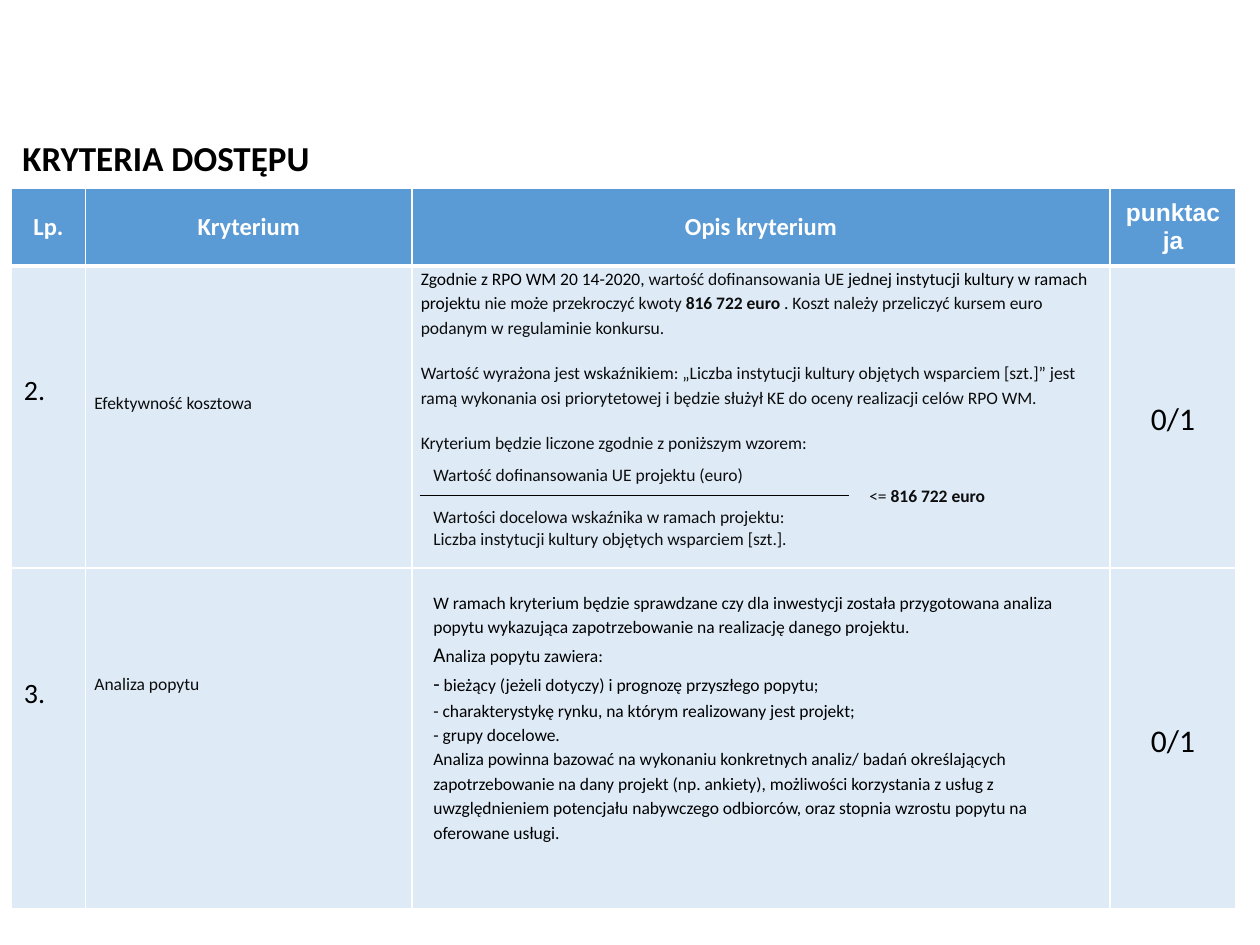
import pptx
import pptx.dml.color
import pptx.enum.text
import pptx.util
import lxml.etree
import pptx.oxml.ns

RGB = pptx.dml.color.RGBColor
BLACK = RGB(0x00, 0x00, 0x00)
DARK = RGB(0x0D, 0x0D, 0x0D)
WHITE = RGB(0xFF, 0xFF, 0xFF)
BLUE = RGB(0x5B, 0x9B, 0xD5)
PALE = RGB(0xDE, 0xEB, 0xF7)

PP = pptx.enum.text.PP_ALIGN
MID = pptx.enum.text.MSO_ANCHOR.MIDDLE
TOP = pptx.enum.text.MSO_ANCHOR.TOP
UNIT = pptx.util.Inches(0.1)
WIDE, HIGH = 100, 75

COLS = (5.9, 25.9, 55.4, 10)
ROWS = (6.2, 24, 27)
HEADS = (("Lp.", "Calibri"), ("Kryterium", "Calibri"),
         ("Opis kryterium", "Calibri"), ("punktacja", "Arial"))
LOOSE = dict(line=1.15, gap=6)
INSET = dict(left=1)
SPACED = dict(left=1, line=1.15)

COST = [
    ([("Zgodnie z RPO WM 20 14-2020, ", BLACK), ("wartość dofinansowania UE", DARK),
      (" jednej instytucji kultury w ramach projektu ", BLACK),
      ("nie może przekroczyć kwoty ", DARK), ("816\u00a0722 euro", DARK, True), (" . ", BLACK),
      ("Koszt należy przeliczyć kursem euro podanym w regulaminie konkursu.", DARK)], LOOSE),
    ([("Wartość wyrażona jest ", DARK), ("w", BLACK),
      ("skaźnikiem: „Liczba instytucji kultury objętych wsparciem [szt.]” jest ramą "
       "wykonania osi priorytetowej i będzie służył KE do oceny realizacji celów RPO WM.",
       DARK)], LOOSE),
    ([("Kryterium będzie liczone zgodnie z poniższym wzorem:", DARK)], LOOSE),
    ([("Wartość dofinansowania UE projektu (euro)", DARK)], INSET),
    ([("<= ", DARK), ("816 722 euro", DARK, True)], dict(left=35.6)),
    ([("Wartości docelowa wskaźnika w ramach projektu:", DARK)], INSET),
    ([("Liczba instytucji kultury objętych wsparciem [szt.].", DARK)], INSET),
]
DEMAND = [(runs, SPACED) for runs in (
    [("W ramach kryterium będzie sprawdzane czy dla inwestycji została przygotowana analiza "
      "popytu wykazująca zapotrzebowanie na realizację danego projektu.", BLACK)],
    [("A", BLACK, False, 12), ("naliza popytu zawiera:", BLACK)],
    [("-", BLACK, False, 12), (" bieżący (jeżeli dotyczy) i prognozę przyszłego popytu;", BLACK)],
    [("- charakterystykę rynku, na którym realizowany jest projekt;", BLACK)],
    [("- grupy docelowe.", BLACK)],
    [("Analiza powinna bazować na wykonaniu konkretnych analiz/ badań określających "
      "zapotrzebowanie na dany projekt (np. ankiety), możliwości korzystania z usług z "
      "uwzględnieniem potencjału nabywczego odbiorców, oraz stopnia wzrostu popytu na "
      "oferowane usługi.", BLACK)],
)]
ITEMS = (("2.", "Efektywność kosztowa", 10.1, COST, 0),
         ("3.", "Analiza popytu", 8.4, DEMAND, 1.7))


def grid(*nums):
    return [round(num * UNIT) for num in nums]


def add_run(para, text, color, bold=False, size=10, face="Calibri"):
    run = para.add_run()
    run.text = text
    font = run.font
    font.name, font.size, font.bold = face, pptx.util.Pt(size), bold
    font.color.rgb = color


def add_para(frame, first, runs, left=0, line=1.0, gap=0, align=PP.LEFT):
    para = frame.paragraphs[0] if first else frame.add_paragraph()
    if left:
        props = para._p.get_or_add_pPr()
        props.set("marL", str(grid(left)[0]))
        props.set("indent", "0")
    para.alignment = align
    para.line_spacing = line
    para.space_before = pptx.util.Pt(0 if first else gap)
    para.space_after = pptx.util.Pt(gap)
    for run in runs:
        add_run(para, *run)


def add_edge(cell, side, width):
    props = cell._tc.get_or_add_tcPr()
    name = pptx.oxml.ns.qn
    edge = lxml.etree.SubElement(props, name("a:" + side), w=str(pptx.util.Pt(width)))
    fill = lxml.etree.SubElement(edge, name("a:solidFill"))
    lxml.etree.SubElement(fill, name("a:srgbClr"), val=str(WHITE))


def fill_cell(cell, paras, color=PALE, anchor=TOP, top=0, side=0.7, under=1):
    for edge, width in (("lnL", 1), ("lnR", 1), ("lnT", 1), ("lnB", under)):
        add_edge(cell, edge, width)
    cell.fill.solid()
    cell.fill.fore_color.rgb = color
    cell.vertical_anchor = anchor
    cell.margin_left, cell.margin_right, cell.margin_top, cell.margin_bottom = grid(
        side, side, top, 0)
    for spot, (runs, style) in enumerate(paras):
        add_para(cell.text_frame, spot == 0, runs, **style)


def add_title(slide, box):
    shape = slide.shapes.add_textbox(*grid(*box))
    frame = shape.text_frame
    frame.word_wrap = True
    frame.vertical_anchor = MID
    add_para(frame, True, [("KRYTERIA DOSTĘPU", BLACK, True, 20)])


def add_grid(slide, box):
    table = slide.shapes.add_table(len(ROWS), len(COLS), *grid(*box)).table
    for col, share in zip(table.columns, COLS):
        col.width = grid(box[2] * share / sum(COLS))[0]
    for row, share in zip(table.rows, ROWS):
        row.height = grid(box[3] * share / sum(ROWS))[0]
    center = dict(align=PP.CENTER)
    for spot, (text, face) in enumerate(HEADS):
        fill_cell(table.cell(0, spot), [([(text, WHITE, True, 14, face)], center)],
                  BLUE, MID, side=1, under=3)
    for row, (mark, name, drop, paras, top) in enumerate(ITEMS, 1):
        fill_cell(table.cell(row, 0), [([(mark, BLACK, False, 16)], {})], top=8.6, side=1)
        fill_cell(table.cell(row, 1), [([(name, DARK)], {})], top=drop)
        fill_cell(table.cell(row, 2), paras, top=top)
        fill_cell(table.cell(row, 3),
                  [([("0/1", BLACK, False, 18)], dict(LOOSE, align=PP.CENTER))], anchor=MID)


def add_bar(slide, box):
    left, top, width, tall = box
    line = slide.shapes.add_connector(
        pptx.enum.shapes.MSO_CONNECTOR.STRAIGHT, *grid(left, top, left + width, top + tall))
    line.line.color.rgb = BLACK
    line.line.width = pptx.util.Pt(0.5)
    lxml.etree.SubElement(line._element.spPr, pptx.oxml.ns.qn("a:effectLst"))


def main():
    deck = pptx.Presentation()
    deck.slide_width, deck.slide_height = grid(WIDE, HIGH)
    slide = deck.slides.add_slide(deck.slide_layouts[6])
    add_title(slide, (0.8, 10.3, 66.7, 4.4))
    add_grid(slide, (0.9, 14.9, sum(COLS), sum(ROWS)))
    add_bar(slide, (33.3, 39.3, 34.1, 0))
    deck.save("out.pptx")


if __name__ == "__main__":
    import pptx.enum.shapes
    main()
